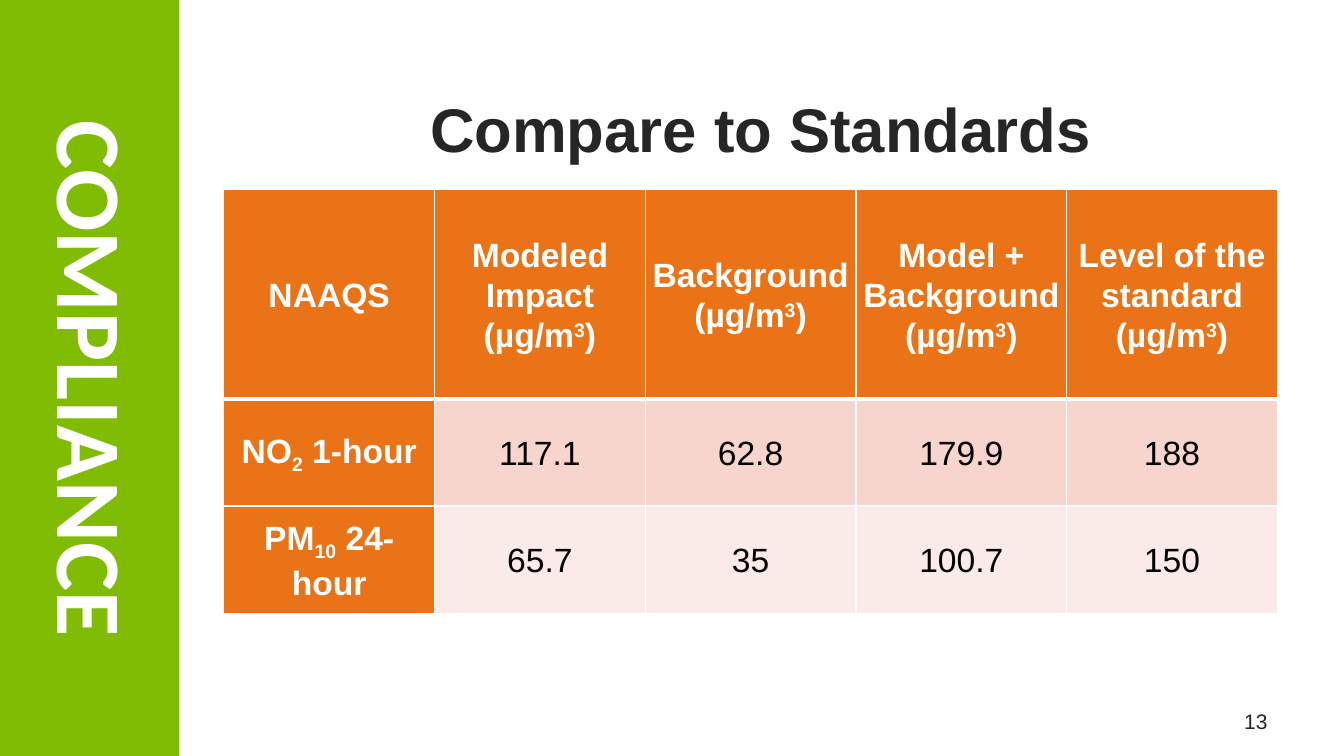
import pptx
import pptx.dml.color
import pptx.enum.shapes
import pptx.enum.text
import pptx.oxml
import pptx.oxml.ns
import pptx.util

ALIGN = pptx.enum.text.PP_ALIGN
ANCHOR = pptx.enum.text.MSO_ANCHOR
NS = pptx.oxml.ns.nsdecls("a")
HUES = {
    "green": "80BC03", "orange": "EA7317", "rose": "F7D5CC", "blush": "FBEBE8",
    "white": "FFFFFF", "ink": "262626", "black": "000000",
}
HEADS = [
    "NAAQS", "Modeled Impact (µg/m|3|)", "Background (µg/m|3|)",
    "Model + Background (µg/m|3|)", "Level of the standard (µg/m|3|)",
]
ROWS = [
    ["NO|2| 1-hour", "117.1", "62.8", "179.9", "188"],
    ["PM|10| 24-hour", "65.7", "35", "100.7", "150"],
]


def px(count):
    return pptx.util.Emu(count * 9144)


def rgb(name):
    return pptx.dml.color.RGBColor.from_string(HUES[name])


class Deck:
    def __init__(self, slide, font):
        self.slide = slide
        self.font = font

    def place(self, shape, left, top, width, height):
        shape.left, shape.top = px(left), px(top)
        shape.width, shape.height = px(width), px(height)

    def text(self, frame, text, size, hue, bold=False, align=ALIGN.CENTER,
             font=None, shift=0):
        para = frame.paragraphs[0]
        para.alignment = align
        for index, part in enumerate(text.split("|")):
            run = para.add_run()
            run.text = part
            run.font.name = font or self.font
            run.font.size = pptx.util.Pt(size)
            run.font.bold = bold
            run.font.color.rgb = rgb(hue)
            if index % 2:
                run.font._element.set("baseline", str(shift * 1000))
        return para

    def band(self, left, top, width, height, hue):
        shape = self.slide.shapes.add_shape(
            pptx.enum.shapes.MSO_SHAPE.RECTANGLE,
            px(left), px(top), px(width), px(height))
        shape.shadow.inherit = False
        shape.fill.solid()
        shape.fill.fore_color.rgb = rgb(hue)
        shape.line.fill.background()
        self.slide.shapes._spTree.insert(2, shape._element)

    def title(self, text, *box):
        shape = self.slide.shapes.title
        self.place(shape, *box)
        shape.rotation = 90
        frame = shape.text_frame
        frame.auto_size = pptx.enum.text.MSO_AUTO_SIZE.NONE
        frame.vertical_anchor = ANCHOR.MIDDLE
        self.text(frame, text, 66, "white", True, font="Calibri")

    def body(self, text, *box):
        shape = self.slide.placeholders[1]
        self.place(shape, *box)
        frame = shape.text_frame
        frame.auto_size = pptx.enum.text.MSO_AUTO_SIZE.NONE
        frame.vertical_anchor = ANCHOR.BOTTOM
        frame.margin_bottom = px(34)
        para = self.text(frame, text, 44, "ink", True)
        props = para._p.get_or_add_pPr()
        props.set("marL", str(px(6)))
        props.set("indent", "0")
        props.append(pptx.oxml.parse_xml(f"<a:buNone {NS}/>"))

    def label(self, text, left, top, width, height):
        shape = self.slide.shapes.add_textbox(
            px(left), px(top), px(width), px(height))
        frame = shape.text_frame
        frame.word_wrap = True
        frame.vertical_anchor = ANCHOR.MIDDLE
        self.text(frame, text, 15, "ink", align=ALIGN.RIGHT)

    def edges(self, cell, row):
        props = cell._tc.get_or_add_tcPr()
        thick = {0: "B", 1: "T"}.get(row)
        for index, side in enumerate("LRTB"):
            width = pptx.util.Pt(3 if side == thick else 1)
            props.insert(index, pptx.oxml.parse_xml(
                f'<a:ln{side} {NS} w="{width}"><a:solidFill>'
                f'<a:srgbClr val="{HUES["white"]}"/></a:solidFill></a:ln{side}>'))

    def cell(self, cell, text, row, col):
        head = row == 0 or col == 0
        cell.fill.solid()
        cell.fill.fore_color.rgb = rgb(
            "orange" if head else ("rose", "blush")[row - 1])
        cell.vertical_anchor = ANCHOR.MIDDLE
        cell.margin_left = cell.margin_right = px(7)
        cell.margin_top = cell.margin_bottom = 0
        para = self.text(cell.text_frame, text, 24,
                         "white" if head else "black", head,
                         shift=-25 if row else 30)
        para.line_spacing = 1.07
        self.edges(cell, row)

    def table(self, data, left, top, wide, highs):
        count = len(data[0])
        grid = self.slide.shapes.add_table(
            len(data), count, px(left), px(top),
            px(wide * count), px(sum(highs))).table
        for col in grid.columns:
            col.width = px(wide)
        for row, (texts, high) in enumerate(zip(data, highs)):
            grid.rows[row].height = px(high)
            for col, text in enumerate(texts):
                self.cell(grid.cell(row, col), text, row, col)


def main():
    show = pptx.Presentation()
    show.slide_width, show.slide_height = px(1333), px(750)
    deck = Deck(show.slides.add_slide(show.slide_layouts[1]), "Arial")
    deck.band(0, 0, 178, 750, "green")
    deck.title("COMPLIANCE", -266, 292, 720, 167)
    deck.body("Compare to Standards", 237, 25, 1029, 173)
    deck.table([HEADS] + ROWS, 222, 188, 209, [208, 106, 107])
    deck.label("13", 956, 695, 311, 40)
    show.save("out.pptx")


if __name__ == "__main__":
    main()
